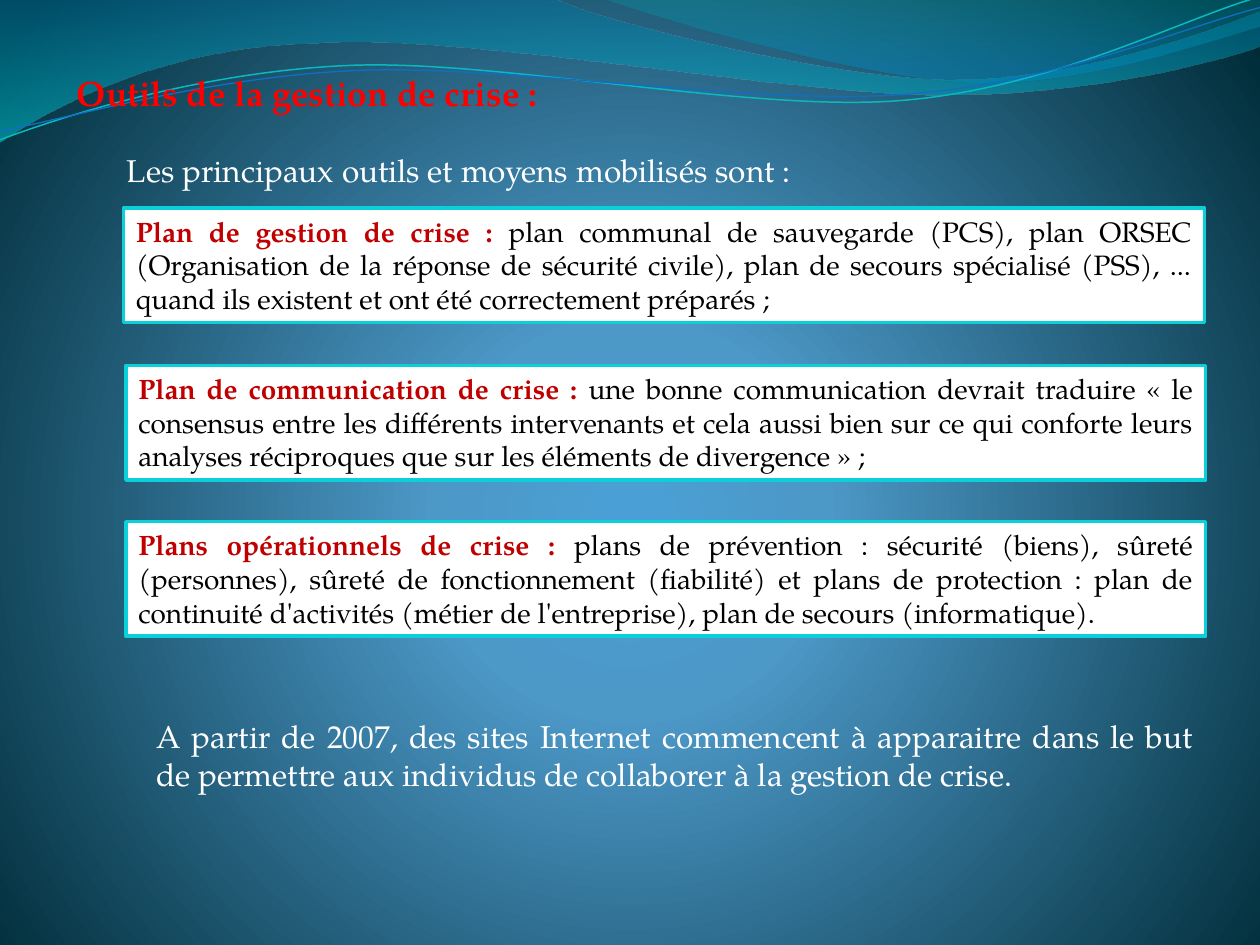
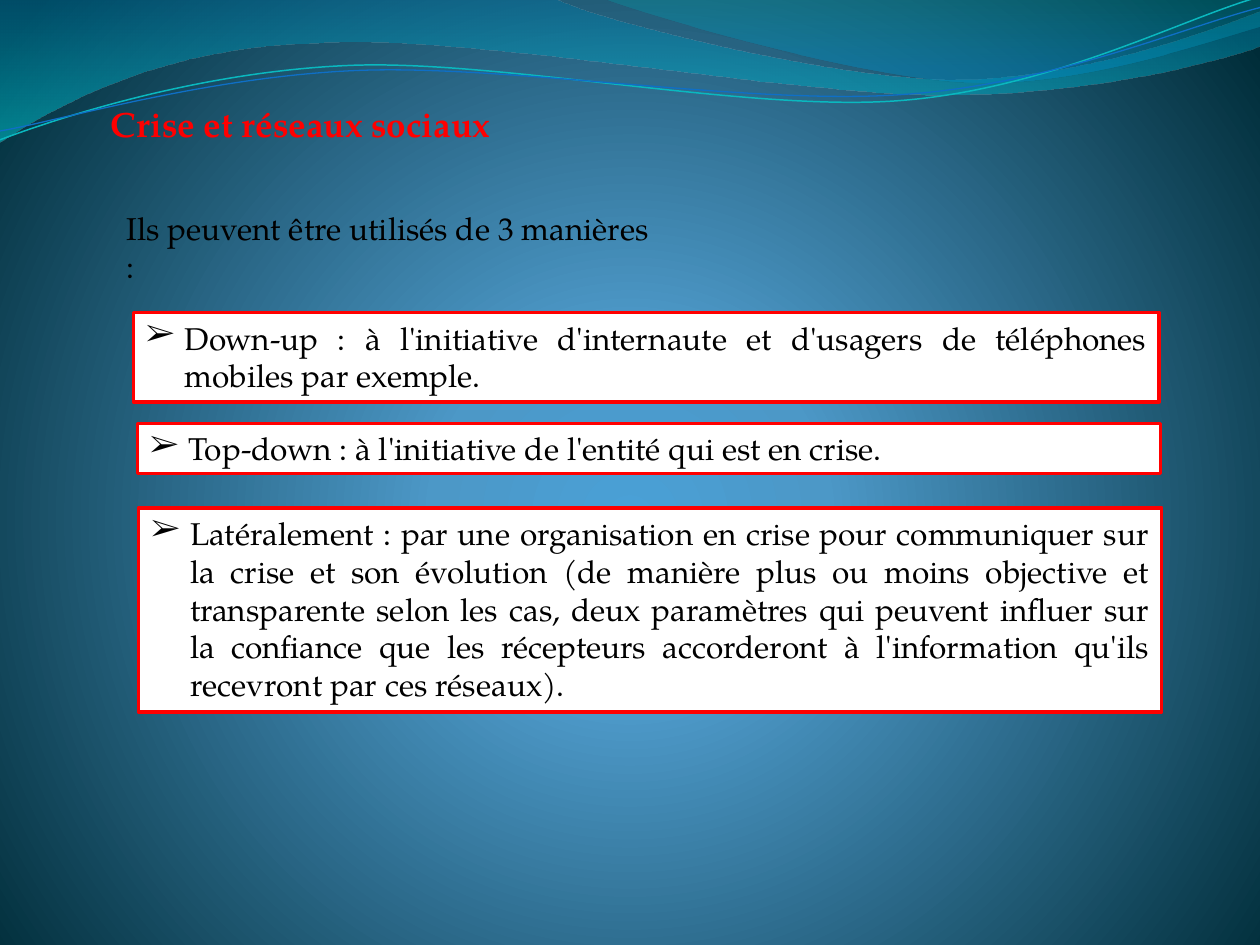
from lxml import etree
from pptx import Presentation
from pptx.dml.color import RGBColor
from pptx.enum.shapes import MSO_SHAPE
from pptx.enum.text import MSO_ANCHOR, MSO_AUTO_SIZE, PP_ALIGN
from pptx.oxml.ns import qn
from pptx.util import Inches, Pt

RECTANGLE = MSO_SHAPE.RECTANGLE
TOP = MSO_ANCHOR.TOP
NO_AUTOFIT = MSO_AUTO_SIZE.NONE
LEFT, JUSTIFY = PP_ALIGN.LEFT, PP_ALIGN.JUSTIFY

FONT = "TeX Gyre Pagella"
TITLE_ONLY = 5
COLORS = {
    "title": "FF0000",
    "label": "C00000",
    "dark": "000000",
    "light": "FFFFFF",
    "cyan": "0BD0D9",
    "red": "FF0000",
    "wave_teal": "0AB8BF",
    "wave_blue": "0F6FC6",
}

# Gradient stops: position %, colour, opacity %
BACKGROUND_STOPS = [(0, "4AA0D6", 100), (25, "4C98C7", 100), (100, "002C38", 100)]
BACKGROUND_FOCUS = {"l": 10, "t": 110, "r": 10, "b": 100}

# Outlines: a start point, then line ends (2 numbers) or Bézier curves (6 numbers)
FILLED_WAVES = [
    ([(0, "0074A1", 45), (100, "00C6CF", 55)],
     [(0, 0), (4.4, -0.01), (4.76, 0.17, 6.64, 0.63, 7.58, 0.63),
      (8.53, 0.63, 9.58, 0.26, 10, 0.09), (10.01, 0.36),
      (9.83, 0.44, 8.7, 0.76, 7.46, 0.75), (6.22, 0.75, 3.82, 0.28, 2.57, 0.34),
      (1.29, 0.36, 0.46, 0.83, -0.01, 1.13), (0, 0)]),
    ([(0, "00A1A9", 30), (80, "008BBF", 45)],
     [(4.79, -0.01), (5.09, 0.11, 6.82, 0.62, 7.69, 0.65),
      (8.56, 0.69, 9.61, 0.32, 10, 0.21), (10, 0), (4.79, -0.01)]),
]
LINE_WAVES = [
    ("wave_teal", 0.85,
     [(0, 1.11), (0.48, 0.93, 1.58, 0.57, 2.77, 0.52),
      (3.95, 0.47, 5.93, 0.89, 7.13, 0.8), (8.33, 0.71, 9.38, 0.15, 9.98, -0.02)]),
    ("wave_blue", 0.75,
     [(0, 1.04), (0.47, 0.96, 1.64, 0.61, 2.83, 0.56),
      (4.03, 0.51, 5.97, 0.84, 7.17, 0.75), (8.36, 0.67, 9.41, 0.21, 10, 0.06)]),
]

# Boxes: left, top, width, height in inches
CRISIS_PLANS = [
    ((0.98, 1.65, 8.58, 0.91), "Plan de gestion de crise : ",
     "plan communal de sauvegarde (PCS), plan ORSEC (Organisation de la réponse de "
     "sécurité civile), plan de secours spécialisé (PSS), ... quand ils existent et "
     "ont été correctement préparés ;"),
    ((1, 2.9, 8.57, 0.91), "Plan de communication de crise : ",
     "une bonne communication devrait traduire « le consensus entre les différents "
     "intervenants et cela aussi bien sur ce qui conforte leurs analyses réciproques "
     "que sur les éléments de divergence » ;"),
    ((1, 4.14, 8.57, 0.91), "Plans opérationnels de crise : ",
     "plans de prévention : sécurité (biens), sûreté (personnes), sûreté de "
     "fonctionnement (fiabilité) et plans de protection : plan de continuité "
     "d'activités (métier de l'entreprise), plan de secours (informatique)."),
]
NETWORK_USES = [
    ((1.06, 2.48, 8.14, 0.71),
     "Down-up : à l'initiative d'internaute et d'usagers de téléphones mobiles par "
     "exemple."),
    ((1.09, 3.36, 8.12, 0.4),
     "Top-down : à l'initiative de l'entité qui est en crise."),
    ((1.1, 4.03, 8.12, 1.62),
     "Latéralement : par une organisation en crise pour communiquer sur la crise et "
     "son évolution (de manière plus ou moins objective et transparente selon les "
     "cas, deux paramètres qui peuvent influer sur la confiance que les récepteurs "
     "accorderont à l'information qu'ils recevront par ces réseaux)."),
]


def color(name):
    return RGBColor.from_string(COLORS[name])


def inches(values):
    return [Inches(value) for value in values]


# Gradients
def set_gradient(fill, element, stops, focus=None):
    """Fill with a vertical gradient, or a circular one when a focus is given."""
    fill.gradient()
    gradient = element.find(".//" + qn("a:gradFill"))
    for child in list(gradient):
        gradient.remove(child)
    stop_list = etree.SubElement(gradient, qn("a:gsLst"))
    for position, hex_color, opacity in stops:
        stop = etree.SubElement(stop_list, qn("a:gs"), pos=str(position * 1000))
        stop_color = etree.SubElement(stop, qn("a:srgbClr"), val=hex_color)
        if opacity < 100:
            etree.SubElement(stop_color, qn("a:alpha"), val=str(opacity * 1000))
    if focus:
        circle = etree.SubElement(gradient, qn("a:path"), path="circle")
        sides = {side: str(value * 1000) for side, value in focus.items()}
        etree.SubElement(circle, qn("a:fillToRect"), sides)
    else:
        etree.SubElement(gradient, qn("a:lin"), ang="5400000", scaled="1")


# Waves
def add_wave(slide, outline, close):
    """Build the outline from its end points, then bend the curved segments."""
    ends = [inches(segment[-2:]) for segment in outline]
    builder = slide.shapes.build_freeform(*ends[0], scale=1.0)
    builder.add_line_segments(ends[1:], close=close)
    wave = builder.convert_to_shape()
    wave.shadow.inherit = False
    lines = list(wave.element.iter(qn("a:lnTo")))
    for line, segment in zip(lines, outline[1:]):
        if len(segment) == 6:
            curve = etree.Element(qn("a:cubicBezTo"))
            for x, y in zip(segment[::2], segment[1::2]):
                etree.SubElement(curve, qn("a:pt"), x=str(Inches(x) - wave.left),
                                 y=str(Inches(y) - wave.top))
            line.getparent().replace(line, curve)
    return wave


def decorate_master(master, slide):
    """Set the shared background and move the waves from the slide to the master."""
    set_gradient(master.background.fill, master.element, BACKGROUND_STOPS,
                 BACKGROUND_FOCUS)
    waves = []
    for stops, outline in FILLED_WAVES:
        wave = add_wave(slide, outline, close=True)
        set_gradient(wave.fill, wave.element, stops)
        wave.line.fill.background()
        waves.append(wave)
    for line_color, width, outline in LINE_WAVES:
        wave = add_wave(slide, outline, close=False)
        wave.fill.background()
        wave.line.color.rgb = color(line_color)
        wave.line.width = Pt(width)
        waves.append(wave)
    for index, wave in enumerate(waves):
        master.shapes.element.insert(2 + index, wave.element)


# Text
def write(shape, parts, size, alignment=LEFT):
    """Write (text, colour, bold) parts as one paragraph."""
    frame = shape.text_frame
    frame.word_wrap = True
    frame.auto_size = NO_AUTOFIT
    frame.vertical_anchor = TOP
    paragraph = frame.paragraphs[0]
    paragraph.alignment = alignment
    for text, color_name, bold in parts:
        run = paragraph.add_run()
        run.text = text
        run.font.name = FONT
        run.font.size = Pt(size)
        run.font.bold = bold
        run.font.color.rgb = color(color_name)
    return paragraph


def add_titled_slide(presentation, box, text):
    slide = presentation.slides.add_slide(presentation.slide_layouts[TITLE_ONLY])
    title = slide.shapes.title
    title.left, title.top, title.width, title.height = inches(box)
    write(title, [(text, "title", True)], 20)
    return slide


def add_text(slide, box, text, color_name, alignment=LEFT):
    text_box = slide.shapes.add_textbox(*inches(box))
    write(text_box, [(text, color_name, False)], 18, alignment)


def add_panel(slide, box, line_color, parts, size):
    panel = slide.shapes.add_shape(RECTANGLE, *inches(box))
    panel.shadow.inherit = False
    panel.fill.solid()
    panel.fill.fore_color.rgb = color("light")
    panel.line.color.rgb = color(line_color)
    panel.line.width = Pt(2)
    return write(panel, parts, size, JUSTIFY)


def add_bullet(paragraph, indent=0.31):
    properties = paragraph._p.get_or_add_pPr()
    properties.set("marL", str(Inches(indent)))
    properties.set("indent", str(-Inches(indent)))
    etree.SubElement(properties, qn("a:buFont"), typeface=FONT)
    etree.SubElement(properties, qn("a:buChar"), char="➢")


# Slides
def build_tools_slide(presentation):
    slide = add_titled_slide(presentation, (0.51, 0.52, 4.01, 0.44),
                             "Outils de la gestion de crise :")
    add_text(slide, (0.91, 1.15, 5.94, 0.4),
             "Les principaux outils et moyens mobilisés sont :", "light")
    for box, label, text in CRISIS_PLANS:
        add_panel(slide, box, "cyan",
                  [(label, "label", True), (text, "dark", False)], 16)
    add_text(slide, (1.14, 5.64, 8.43, 0.71),
             "A partir de 2007, des sites Internet commencent à apparaitre dans le but "
             "de permettre aux individus de collaborer à la gestion de crise.",
             "light", JUSTIFY)
    return slide


def build_networks_slide(presentation):
    slide = add_titled_slide(presentation, (0.78, 0.76, 4.22, 0.44),
                             "Crise et réseaux sociaux")
    add_text(slide, (0.91, 1.61, 4.36, 0.4),
             "Ils peuvent être utilisés de 3 manières :", "dark")
    for box, text in NETWORK_USES:
        add_bullet(add_panel(slide, box, "red", [(text, "dark", False)], 18))


def main():
    presentation = Presentation()
    presentation.slide_width = Inches(10)
    presentation.slide_height = Inches(7.5)
    tools_slide = build_tools_slide(presentation)
    decorate_master(presentation.slide_master, tools_slide)
    build_networks_slide(presentation)
    presentation.save("out.pptx")


if __name__ == "__main__":
    main()
